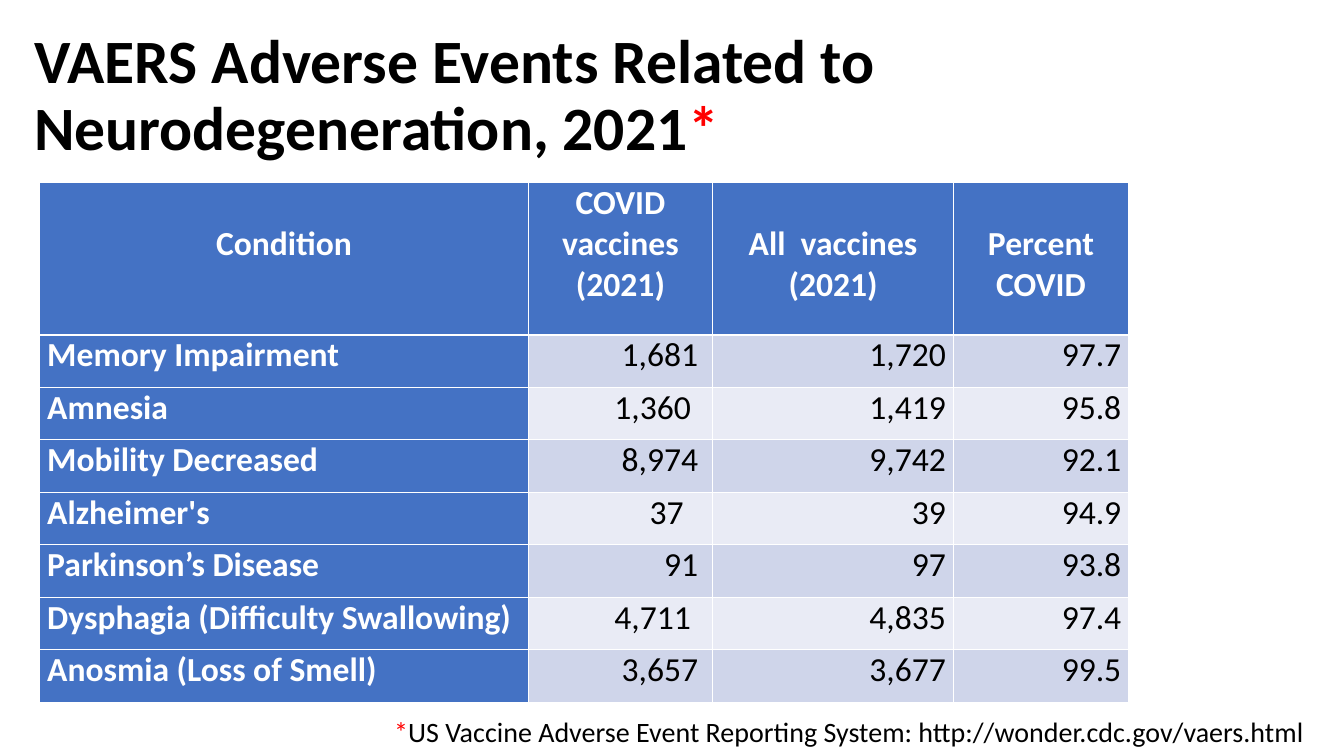
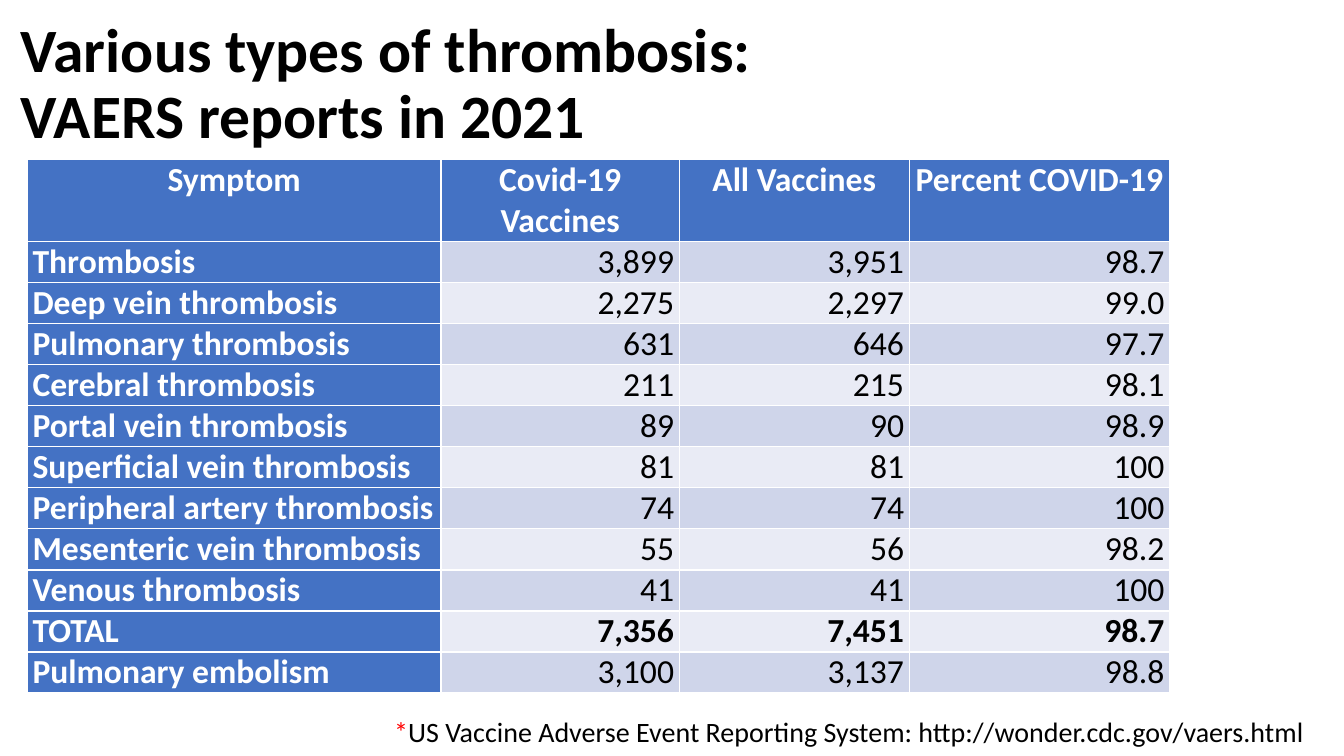
from dataclasses import dataclass

from pptx import Presentation
from pptx.dml.color import RGBColor
from pptx.enum.text import MSO_ANCHOR, MSO_AUTO_SIZE, PP_ALIGN
from pptx.util import Emu, Pt


@dataclass(frozen=True)
class Theme:
    font: str = "Calibri"
    black: str = "000000"
    white: str = "FFFFFF"
    red: str = "FF0000"
    blue: str = "4472C4"
    bands: tuple = ("CFD5EA", "E9EBF5")
    title_size: int = 44
    table_size: int = 24
    source_size: int = 20


THEME = Theme()
TITLE_ONLY = 5
LINE = 39  # height of one line of table text
SPACE = 7  # width of one space in table text
SOURCE = "US Vaccine Adverse Event Reporting System: http://wonder.cdc.gov/vaers.html"


def px(length):
    return Emu(length * 9525)


def write(paragraph, text, *, size, color=THEME.black, bold=False, align=PP_ALIGN.LEFT):
    """Add text to a paragraph; a newline becomes a line break."""
    paragraph.alignment = align
    for index, line in enumerate(text.split("\n")):
        if index:
            paragraph.add_line_break()
        run = paragraph.add_run()
        run.text = line
        run.font.name = THEME.font
        run.font.size = Pt(size)
        run.font.bold = bold
        run.font.color.rgb = RGBColor.from_string(color)


# Content: header_lines is the number of lines each heading is lowered by,
# indents the number of spaces that set the first figure of each row in.
SLIDES = [
    dict(
        title="VAERS Adverse Events Related to Neurodegeneration, 2021",
        marker="*",
        title_box=(23, 23, 1166, 139),
        table_at=(38, 174),
        columns=(465, 176, 229, 167),
        header_height=145,
        row_height=50,
        inset=7,
        header_lines=(1, 0, 1, 1),
        indents=(1, 2, 1, 3, 1, 2, 1),
        header=("Condition", "COVID vaccines\n(2021)", "All  vaccines\n(2021)", "Percent COVID"),
        rows=[
            ("Memory Impairment", "1,681", "1,720", "97.7"),
            ("Amnesia", "1,360", "1,419", "95.8"),
            ("Mobility Decreased", "8,974", "9,742", "92.1"),
            ("Alzheimer's", "37", "39", "94.9"),
            ("Parkinson’s Disease", "91", "97", "93.8"),
            ("Dysphagia (Difficulty Swallowing)", "4,711", "4,835", "97.4"),
            ("Anosmia (Loss of Smell)", "3,657", "3,677", "99.5"),
        ],
    ),
    dict(
        title="Various types of thrombosis:\nVAERS reports in 2021",
        marker="",
        title_box=(10, 12, 761, 139),
        table_at=(26, 152),
        columns=(394, 227, 219, 248),
        header_height=78,
        row_height=39,
        inset=5,
        header_lines=(0, 0, 0, 0),
        indents=(0,) * 11,
        header=("Symptom", "Covid-19 Vaccines", "All Vaccines", "Percent COVID-19"),
        rows=[
            ("Thrombosis", "3,899", "3,951", "98.7"),
            ("Deep vein thrombosis", "2,275", "2,297", "99.0"),
            ("Pulmonary thrombosis", "631", "646", "97.7"),
            ("Cerebral thrombosis", "211", "215", "98.1"),
            ("Portal vein thrombosis", "89", "90", "98.9"),
            ("Superficial vein thrombosis", "81", "81", "100"),
            ("Peripheral artery thrombosis", "74", "74", "100"),
            ("Mesenteric vein thrombosis", "55", "56", "98.2"),
            ("Venous thrombosis", "41", "41", "100"),
            ("TOTAL", "7,356", "7,451", "98.7"),
            ("Pulmonary embolism", "3,100", "3,137", "98.8"),
        ],
    ),
]

presentation = Presentation()
presentation.slide_width = px(1280)
presentation.slide_height = px(720)

for content in SLIDES:
    slide = presentation.slides.add_slide(presentation.slide_layouts[TITLE_ONLY])

    # Title
    title = slide.shapes.title
    title.left, title.top, title.width, title.height = map(px, content["title_box"])
    frame = title.text_frame
    frame.auto_size = MSO_AUTO_SIZE.NONE
    frame.vertical_anchor = MSO_ANCHOR.MIDDLE
    paragraph = frame.paragraphs[0]
    paragraph.line_spacing = 0.9
    write(paragraph, content["title"], size=THEME.title_size, bold=True)
    if content["marker"]:
        write(paragraph, content["marker"], size=THEME.title_size, color=THEME.red, bold=True)

    # Table grid
    left, top = content["table_at"]
    columns, rows = content["columns"], content["rows"]
    heights = [content["header_height"]] + [content["row_height"]] * len(rows)
    table = slide.shapes.add_table(
        len(heights), len(columns), px(left), px(top), px(sum(columns)), px(sum(heights))
    ).table
    table.first_col = True
    for column, width in zip(table.columns, columns):
        column.width = px(width)
    for row, height in zip(table.rows, heights):
        row.height = px(height)

    # Table cells
    for row_index, texts in enumerate([content["header"], *rows]):
        for column_index, text in enumerate(texts):
            is_header, is_label = row_index == 0, column_index == 0
            margin_top, margin_right = 0, content["inset"]
            fill, color = THEME.blue, THEME.white
            if is_header:
                align = PP_ALIGN.CENTER
                margin_top = LINE * content["header_lines"][column_index]
            elif is_label:
                align = PP_ALIGN.LEFT
            else:
                align = PP_ALIGN.RIGHT
                fill, color = THEME.bands[(row_index - 1) % 2], THEME.black
                if column_index == 1:
                    margin_right += SPACE * content["indents"][row_index - 1]

            cell = table.cell(row_index, column_index)
            cell.margin_left, cell.margin_right = px(content["inset"]), px(margin_right)
            cell.margin_top, cell.margin_bottom = px(margin_top), px(0)
            cell.vertical_anchor = MSO_ANCHOR.TOP
            cell.fill.solid()
            cell.fill.fore_color.rgb = RGBColor.from_string(fill)
            bold = is_header or is_label or texts[0] == "TOTAL"
            write(cell.text_frame.paragraphs[0], text, size=THEME.table_size,
                  color=color, bold=bold, align=align)

    # Source line
    frame = slide.shapes.add_textbox(px(366), px(676), px(901), px(42)).text_frame
    frame.word_wrap = False
    frame.auto_size = MSO_AUTO_SIZE.SHAPE_TO_FIT_TEXT
    paragraph = frame.paragraphs[0]
    write(paragraph, "*", size=THEME.source_size, color=THEME.red)
    write(paragraph, SOURCE, size=THEME.source_size)

presentation.save("out.pptx")
